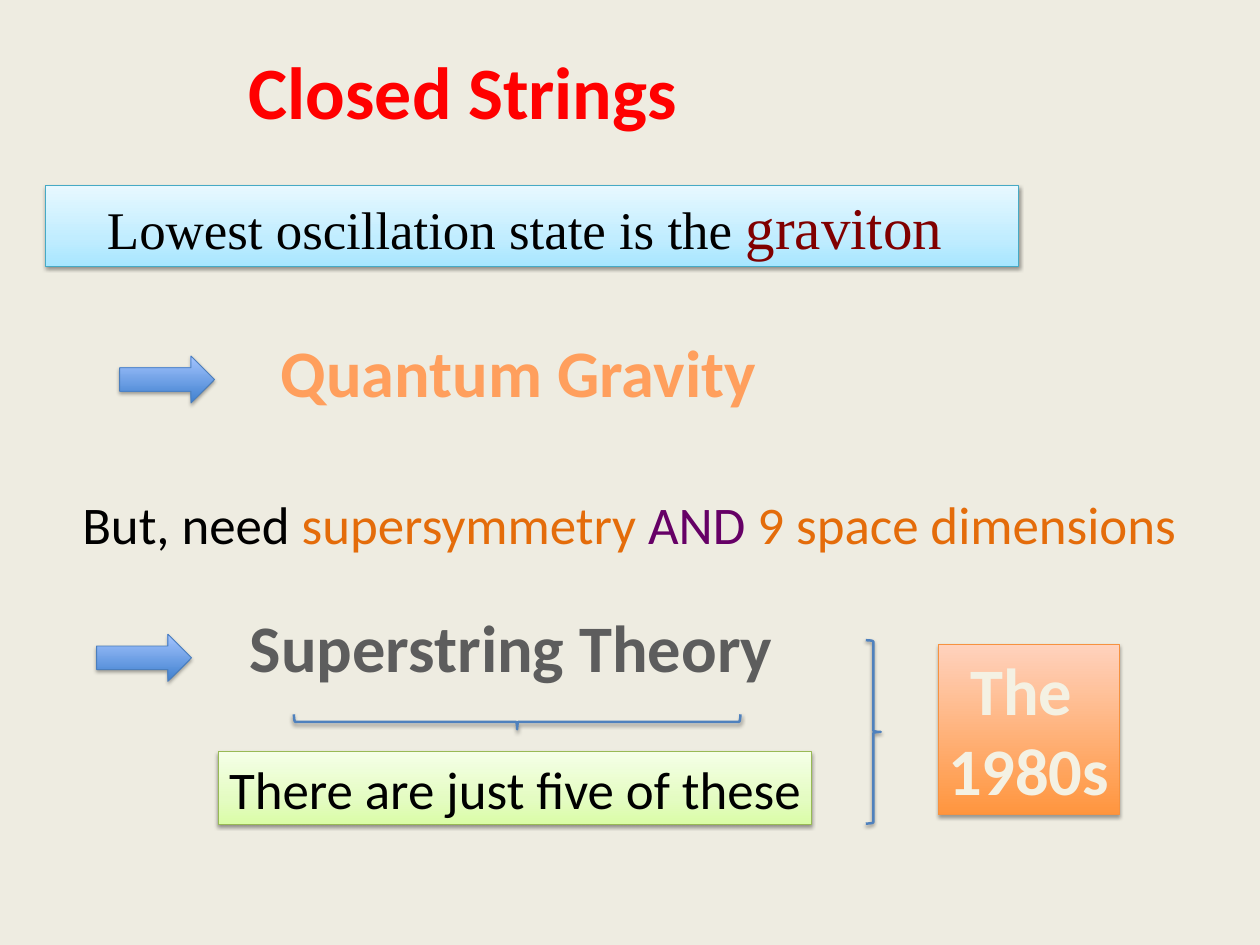
"""Build the Closed Strings slide."""
from copy import deepcopy
from lxml.etree import SubElement
from pptx import Presentation
from pptx.dml.color import RGBColor
from pptx.enum.shapes import MSO_SHAPE as SHAPE
from pptx.enum.text import MSO_ANCHOR, MSO_AUTO_SIZE, PP_ALIGN
from pptx.oxml.ns import qn
from pptx.util import Cm, Pt

COLORS = {
    "background": "EEECE1", "black": "000000", "red": "FF0000", "maroon": "800000",
    "peach": "FF9F5D", "orange": "E46C0A", "purple": "660066", "gray": "5D5D5D",
    "cream": "F4F1E3", "brace": "4F81BD",
}
SKY = [(0, "A7E6FF"), (35, "C1EDFF"), (100, "E7F8FF")]
LIME = [(0, "DAFDA7"), (35, "E4FCC2"), (100, "F5FFE7")]
AMBER = [(0, "FF953E"), (100, "FFD2BD")]
BLUE = [(0, "3F80CE"), (100, "A4C4FF")]


def write(sp, paragraphs, size=43, font="Calibri", bold=False, wrap=False):
    tf = sp.text_frame
    tf.word_wrap = wrap
    tf.auto_size = MSO_AUTO_SIZE.SHAPE_TO_FIT_TEXT
    tf.vertical_anchor = MSO_ANCHOR.TOP
    for i, runs in enumerate(paragraphs):
        p = tf.add_paragraph() if i else tf.paragraphs[0]
        p.alignment = PP_ALIGN.CENTER
        for text, color, *own_size in runs:
            r = p.add_run()
            r.text = text
            r.font.name = font
            r.font.size = Pt(own_size[0] if own_size else size)
            r.font.bold = bold
            r.font.color.rgb = RGBColor.from_string(COLORS[color])


def add_shape(kind, box, stops, line, width=0.75, alpha=38, distance=1.6):
    sp = s.shapes.add_shape(kind, *map(Cm, box))
    if stops:
        sp.fill.gradient()
        sp.fill.gradient_angle = 90
        gs_list = sp.element.spPr.find(".//" + qn("a:gsLst"))
        for _ in stops[2:]:
            gs_list.append(deepcopy(gs_list[0]))
        for stop, (position, color) in zip(sp.fill.gradient_stops, stops):
            stop.position = position / 100
            stop.color.rgb = RGBColor.from_string(color)
    else:
        sp.fill.background()
    sp.line.color.rgb = RGBColor.from_string(line)
    sp.line.width = Pt(width)
    sp.shadow.inherit = False
    shadow = SubElement(sp.element.spPr.find(qn("a:effectLst")), qn("a:outerShdw"),
                        blurRad=str(Pt(3.1)), dist=str(Pt(distance)),
                        dir="5400000", rotWithShape="0")
    tint = SubElement(shadow, qn("a:srgbClr"), val=COLORS["black"])
    SubElement(tint, qn("a:alpha"), val=str(alpha * 1000))
    return sp


prs = Presentation()
prs.slide_width, prs.slide_height = Cm(36.12), Cm(27.1)
s = prs.slides.add_slide(prs.slide_layouts[6])
s.background.fill.solid()
s.background.fill.fore_color.rgb = RGBColor.from_string(COLORS["background"])

headings = [
    ("Closed Strings ", "red", 60, (6.81, 1.19, 12.93, 2.82)),
    ("Quantum Gravity ", "peach", 54, (7.67, 9.37, 14.38, 2.57)),
    ("Superstring Theory", "gray", 54, (6.81, 17.27, 15.7, 2.57)),
]
for text, color, size, box in headings:
    write(s.shapes.add_textbox(*map(Cm, box)), [[(text, color)]], size=size, bold=True)

graviton = add_shape(SHAPE.RECTANGLE, (1.3, 5.33, 27.91, 2.31), SKY, "46AAC5")
write(graviton, [[("Lowest oscillation state is the ", "black"), ("graviton ", "maroon", 48)]],
      font="Times New Roman", wrap=True)

needs = s.shapes.add_textbox(Cm(0.94), Cm(13.97), Cm(34.19), Cm(2.08))
write(needs, [[("But, need ", "black"), ("supersymmetry ", "orange"), ("AND", "purple"),
               (" 9 space dimensions", "orange")]], wrap=True)

for left, top in [(3.43, 10.21), (2.77, 18.19)]:
    add_shape(SHAPE.RIGHT_ARROW, (left, top, 2.72, 1.35), BLUE, "4B7EBC", alpha=35, distance=1.8)

for box, rotation in [((14.61, 14.3, 0.43, 12.8), 90), ((24.82, 18.36, 0.43, 5.26), 0)]:
    brace = add_shape(SHAPE.RIGHT_BRACE, box, None, COLORS["brace"], width=2)
    brace.rotation = rotation

five = add_shape(SHAPE.RECTANGLE, (6.25, 21.56, 17.02, 2.08), LIME, "98B955")
write(five, [[("There are just five of these", "black")]])

decade = add_shape(SHAPE.RECTANGLE, (26.9, 18.49, 5.18, 4.88), AMBER, "F69240",
                   alpha=35, distance=1.8)
write(decade, [[("The ", "cream")], [("1980s", "cream")]], size=54, bold=True)

prs.save("out.pptx")
